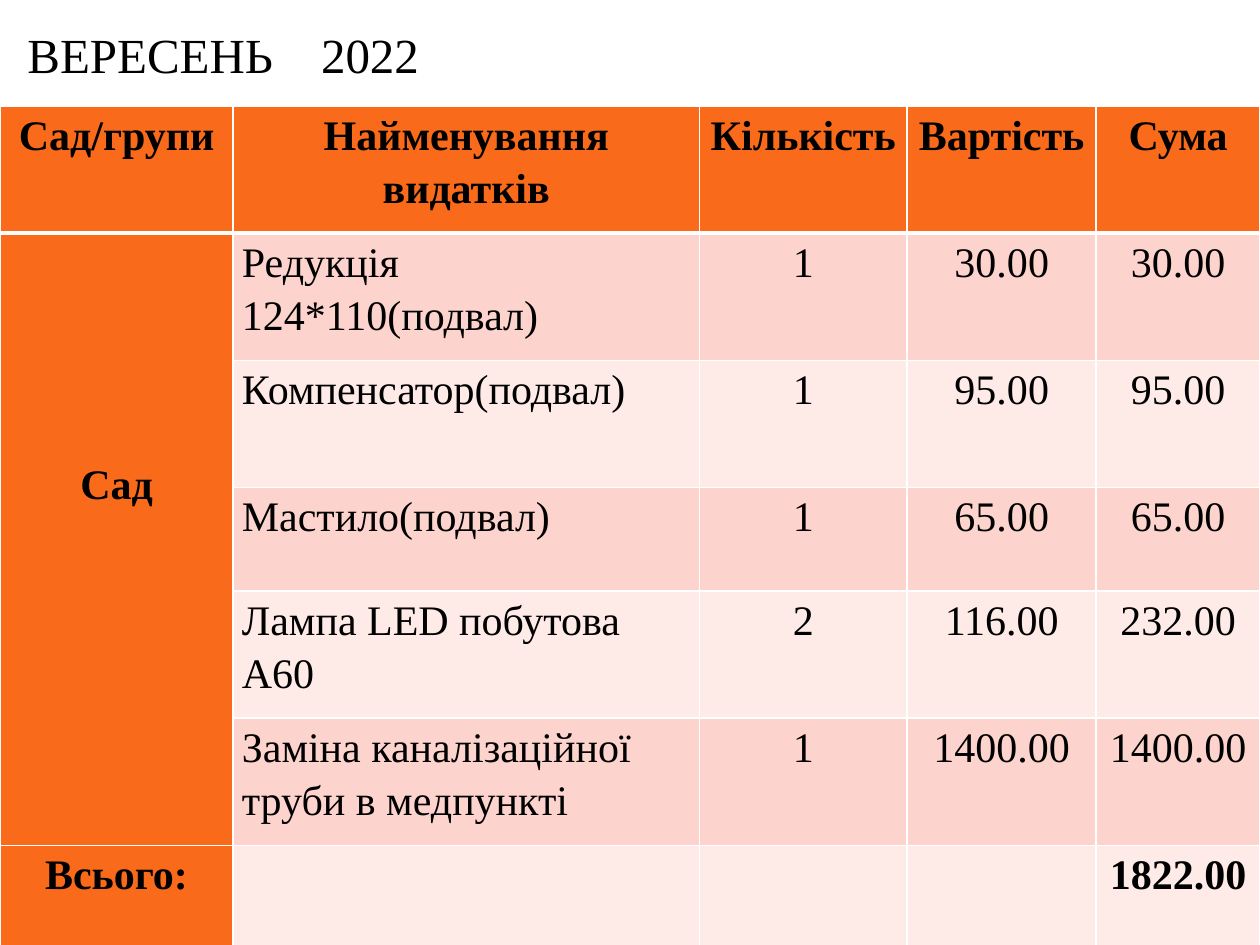
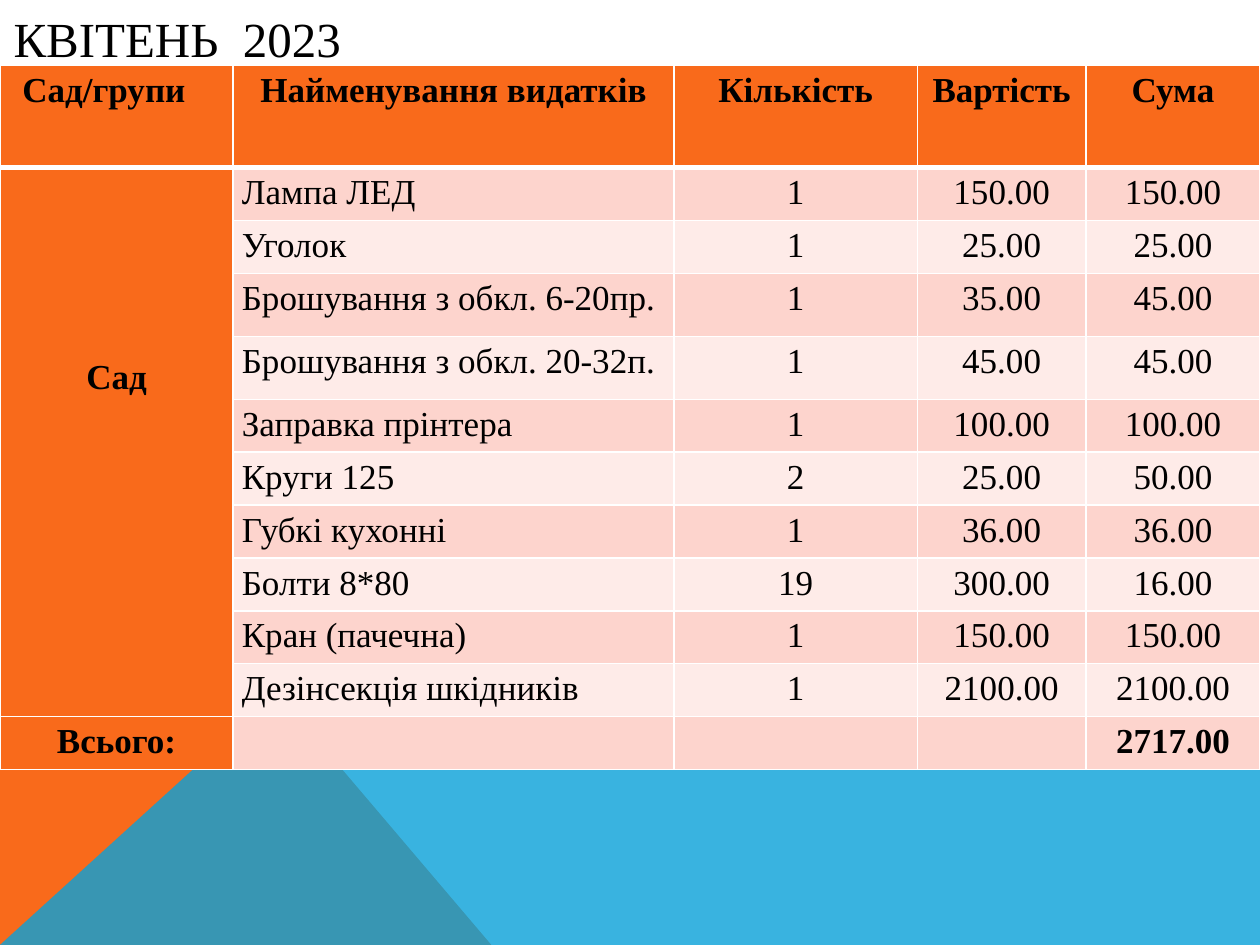
from lxml import etree
from pptx import Presentation
from pptx.dml.color import RGBColor
from pptx.enum.text import MSO_ANCHOR, PP_ALIGN
from pptx.oxml.ns import qn
from pptx.util import Inches, Pt

FONT = "Times New Roman"
BLACK, WHITE = "000000", "FFFFFF"
ORANGE, BLUE = "F96A1B", "08A1D9"
BANDS = ["FDD4CD", "FEEBE8"]
HEADINGS = ["Сад/групи", "Найменування видатків", "Кількість", "Вартість", "Сума"]
LINE_SPACING = 1.15


def color(hex_string):
    return RGBColor.from_string(hex_string)


def write(text_frame, text, size, bold=False, align=PP_ALIGN.LEFT):
    text_frame.text = text
    paragraph = text_frame.paragraphs[0]
    paragraph.alignment = align
    paragraph.font.name = FONT
    paragraph.font.size = Pt(size)
    paragraph.font.bold = bold
    paragraph.font.color.rgb = color(BLACK)
    return paragraph


presentation = Presentation()
presentation.slide_width = Inches(10)
presentation.slide_height = Inches(7.5)

# Grid of 100 columns by 75 rows; both steps are equal
UNIT = presentation.slide_width // 100

# Bottom bands shared by the slides: fill, opacity in percent, outline
bottom_bands = [
    (ORANGE, 100, [(0, 75), (0, 55.2), (22.3, 55.2), (39.1, 75)]),
    (BLUE, 80, [(0, 75), (22.3, 55.2), (100, 55.3), (100, 75)]),
]

months = [
    {
        "title": "ВЕРЕСЕНЬ\t2022",
        "title_box": (1.2, 1.3, 35.4, 6),
        "year_tab": 23.3,
        "size": 24,
        "top": 8.4,
        "columns": [18.5, 37, 16.5, 15, 13],
        "rows": [10.1, 10.1, 10.1, 8.2, 10.1, 10.1, 8.2],
        "first_heading_shift": 0,
        "expenses": [
            ("Редукція 124*110(подвал)", "1", "30.00", "30.00"),
            ("Компенсатор(подвал)", "1", "95.00", "95.00"),
            ("Мастило(подвал)", "1", "65.00", "65.00"),
            ("Лампа LED побутова A60", "2", "116.00", "232.00"),
            ("Заміна каналізаційної труби в медпункті", "1", "1400.00", "1400.00"),
        ],
        "total": "1822.00",
    },
    {
        "title": "КВІТЕНЬ\t2023",
        "title_box": (0.1, 0, 34.1, 6),
        "year_tab": 18.2,
        "size": 20,
        "top": 5.2,
        "columns": [18.5, 35, 19.3, 13.4, 13.8],
        "rows": [8.1] + [4.2] * 2 + [5] * 2 + [4.2] * 7,
        "first_heading_shift": 2,
        "expenses": [
            ("Лампа ЛЕД", "1", "150.00", "150.00"),
            ("Уголок", "1", "25.00", "25.00"),
            ("Брошування з обкл. 6-20пр.", "1", "35.00", "45.00"),
            ("Брошування з обкл. 20-32п.", "1", "45.00", "45.00"),
            ("Заправка прінтера", "1", "100.00", "100.00"),
            ("Круги 125", "2", "25.00", "50.00"),
            ("Губкі кухонні", "1", "36.00", "36.00"),
            ("Болти 8*80", "19", "300.00", "16.00"),
            ("Кран (пачечна)", "1", "150.00", "150.00"),
            ("Дезінсекція шкідників", "1", "2100.00", "2100.00"),
        ],
        "total": "2717.00",
    },
]

for month in months:
    slide = presentation.slides.add_slide(presentation.slide_layouts[6])

    # Bottom bands
    for fill, opacity, points in bottom_bands:
        builder = slide.shapes.build_freeform(*points[0], scale=UNIT)
        builder.add_line_segments(points[1:], close=True)
        shape = builder.convert_to_shape()
        shape.shadow.inherit = False
        shape.line.fill.background()
        shape.fill.solid()
        shape.fill.fore_color.rgb = color(fill)
        if opacity < 100:
            fill_color = shape.element.spPr.find(".//" + qn("a:srgbClr"))
            etree.SubElement(fill_color, qn("a:alpha"), val=str(opacity * 1000))

    # Title, with the year at a tab stop
    title = slide.shapes.add_textbox(*[round(v * UNIT) for v in month["title_box"]])
    title.text_frame.word_wrap = True
    title.text_frame.vertical_anchor = MSO_ANCHOR.MIDDLE
    paragraph = write(title.text_frame, month["title"], 28)
    properties = paragraph._p.get_or_add_pPr()
    tabs = etree.Element(qn("a:tabLst"))
    etree.SubElement(tabs, qn("a:tab"), pos=str(round(month["year_tab"] * UNIT)), algn="l")
    properties.insert(0, tabs)

    # Expense table
    records = [HEADINGS]
    records += [("", *expense) for expense in month["expenses"]]
    records += [("Всього:", "", "", "", month["total"])]
    last = len(records) - 1
    table = slide.shapes.add_table(
        len(records), len(HEADINGS), 0, round(month["top"] * UNIT),
        presentation.slide_width, round(sum(month["rows"]) * UNIT),
    ).table
    table.horz_banding = False
    for column, width in zip(table.columns, month["columns"]):
        column.width = round(width * UNIT)
    for row, height in zip(table.rows, month["rows"]):
        row.height = round(height * UNIT)

    for r, record in enumerate(records):
        for c, text in enumerate(record):
            cell = table.cell(r, c)
            cell.margin_left = cell.margin_right = Inches(0.07)
            cell.margin_top = cell.margin_bottom = 0
            cell.fill.solid()
            is_heading = r == 0 or c == 0
            cell.fill.fore_color.rgb = color(ORANGE if is_heading else BANDS[(r - 1) % 2])
            is_item = c == 1 and r > 0
            paragraph = write(
                cell.text_frame, text, month["size"], is_heading or r == last,
                PP_ALIGN.LEFT if is_item else PP_ALIGN.CENTER,
            )
            paragraph.line_spacing = LINE_SPACING

            # White cell borders, thicker under the heading row
            for position, side in enumerate(["L", "R", "T", "B"]):
                thick = (r, side) in [(0, "B"), (1, "T")]
                border = etree.Element(qn("a:ln" + side), w=str(Pt(3 if thick else 1)))
                border_fill = etree.SubElement(border, qn("a:solidFill"))
                etree.SubElement(border_fill, qn("a:srgbClr"), val=WHITE)
                cell._tc.get_or_add_tcPr().insert(position, border)

    table.cell(0, 0).margin_right += month["first_heading_shift"] * UNIT

    # Group cell, its label four text lines below the top
    group = table.cell(1, 0)
    group.merge(table.cell(last - 1, 0))
    paragraph = write(group.text_frame, "Cад", month["size"], True, PP_ALIGN.CENTER)
    paragraph.line_spacing = LINE_SPACING
    group.margin_top = round(4 * LINE_SPACING * 1.15 * Pt(month["size"]))

presentation.save("out.pptx")
